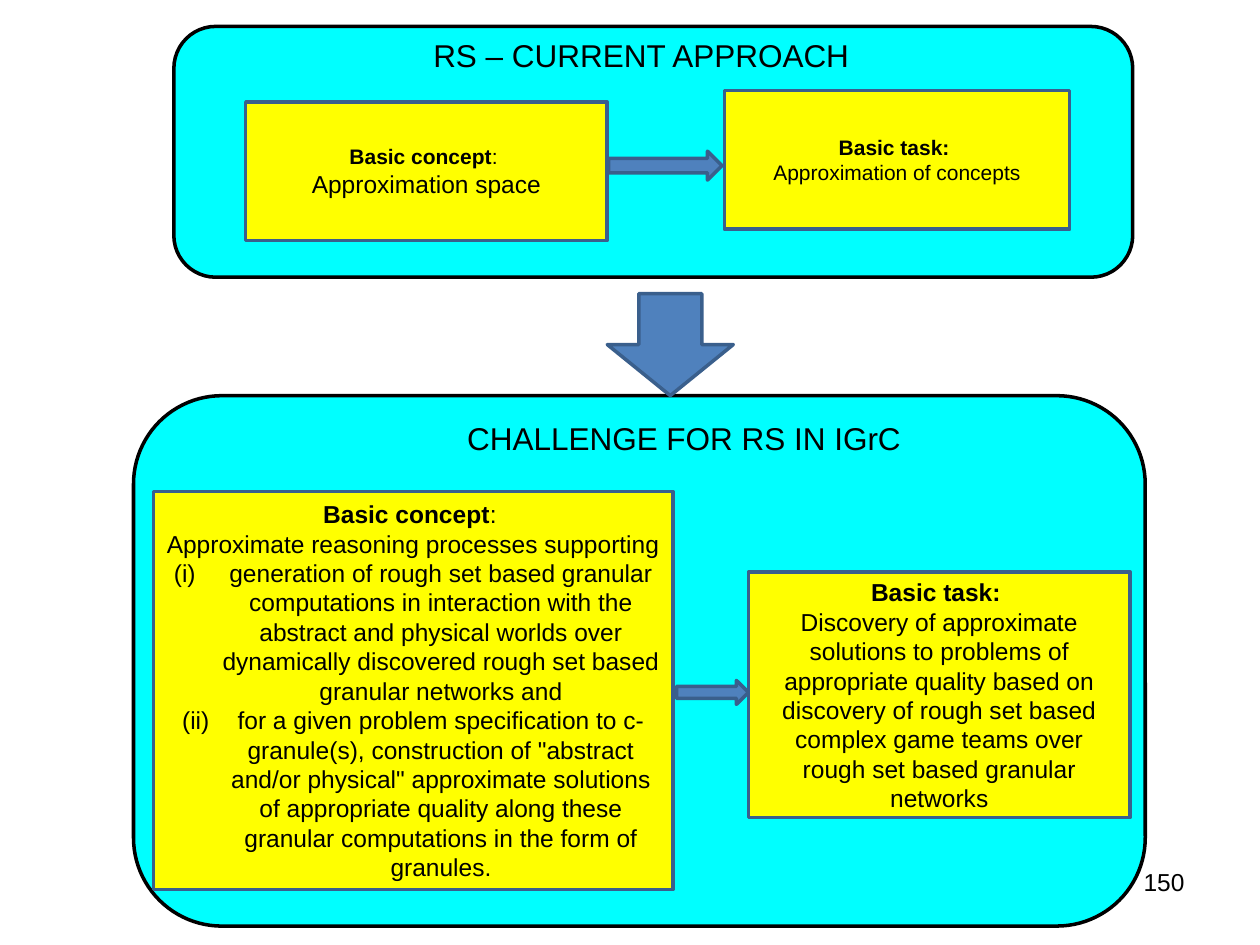
from lxml.etree import SubElement
from pptx import Presentation
from pptx.dml.color import RGBColor
from pptx.enum.shapes import MSO_SHAPE
from pptx.enum.text import MSO_ANCHOR, PP_ALIGN
from pptx.oxml.ns import qn
from pptx.util import Inches, Pt

COLS, ROWS = 100, 75
BLACK, CYAN, YELLOW = "000000", "00FFFF", "FFFF00"
BLUE, DARK_BLUE = "4F81BD", "3A5F8C"


def rgb(value):
    return RGBColor.from_string(value)


def add_run(p, text, size=14, bold=False, color=BLACK, font="Arial"):
    r = p.add_run()
    r.text = text
    r.font.name, r.font.size, r.font.bold = font, Pt(size), bold
    r.font.color.rgb = rgb(color)


def number_paragraph(p, indent=0.44):
    pPr = p._p.get_or_add_pPr()
    pPr.set("marL", str(Inches(indent)))
    pPr.set("indent", str(-Inches(indent)))
    SubElement(pPr, qn("a:buFont"), typeface="+mj-lt")
    SubElement(pPr, qn("a:buAutoNum"), type="romanLcParenBoth")


class Deck:
    def __init__(self):
        self.prs = Presentation()
        self.prs.slide_width, self.prs.slide_height = Inches(10), Inches(7.5)
        self.s = self.prs.slides.add_slide(self.prs.slide_layouts[6])

    def place(self, col, row, cols, rows):
        x, y = self.prs.slide_width / COLS, self.prs.slide_height / ROWS
        return [round(v) for v in (col * x, row * y, cols * x, rows * y)]

    def shape(self, kind, at, fill=BLUE, line=DARK_BLUE):
        sp = self.s.shapes.add_shape(kind, *self.place(*at))
        sp.shadow.inherit = False
        sp.fill.solid()
        sp.fill.fore_color.rgb = rgb(fill)
        sp.line.color.rgb = rgb(line)
        sp.line.width = Pt(2)
        return sp

    def panel(self, at):
        self.shape(MSO_SHAPE.ROUNDED_RECTANGLE, at, CYAN, BLACK)

    def label(self, text, at, size, align):
        tf = self.s.shapes.add_textbox(*self.place(*at)).text_frame
        tf.word_wrap = True
        p = tf.paragraphs[0]
        p.alignment = align
        add_run(p, text, size)

    def card(self, at, head, body, tail="", head_size=14, body_size=14, items=()):
        tf = self.shape(MSO_SHAPE.RECTANGLE, at, YELLOW).text_frame
        tf.word_wrap = True
        tf.vertical_anchor = MSO_ANCHOR.MIDDLE
        p = tf.paragraphs[0]
        p.alignment = PP_ALIGN.CENTER
        add_run(p, head, head_size, bold=True)
        if tail:
            add_run(p, tail, head_size)
        for i, text in enumerate((body, *items)):
            p = tf.add_paragraph()
            p.alignment = PP_ALIGN.CENTER
            if i:
                number_paragraph(p)
            add_run(p, text, body_size)


def main():
    d = Deck()
    d.label("150", (71.7, 68.3, 23.3, 5.2), 14, PP_ALIGN.RIGHT)

    d.panel((13.8, 2.1, 76.1, 19.9))
    d.card((19.5, 8.1, 28.7, 11), "Basic concept", "Approximation space",
           tail=": ", head_size=12)
    d.card((57.5, 7.2, 27.4, 11), "Basic task: ", "Approximation of concepts",
           head_size=12, body_size=12)
    d.shape(MSO_SHAPE.RIGHT_ARROW, (48.3, 12, 9, 2.3))
    d.label("RS – CURRENT APPROACH", (33.4, 2.4, 38.2, 4), 18, PP_ALIGN.LEFT)

    d.panel((10.6, 31.4, 80.3, 42.1))
    d.card((12.2, 39, 41.2, 31.6), "Basic concept",
           "Approximate reasoning processes supporting ", tail=": ",
           items=("generation of rough set based granular computations in "
                  "interaction with the abstract and physical worlds over "
                  "dynamically discovered rough set based granular networks and",
                  "for a given problem specification to c-granule(s), "
                  'construction of "abstract and/or physical" approximate '
                  "solutions of appropriate quality along these granular "
                  "computations in the form of granules."))
    d.card((59.4, 45.4, 30.3, 19.5), "Basic task: ",
           "Discovery of approximate solutions to problems of appropriate "
           "quality based on discovery of rough set based complex game teams "
           "over rough set based granular networks")
    d.shape(MSO_SHAPE.RIGHT_ARROW, (53.7, 54, 5.7, 1.9))
    d.label("CHALLENGE FOR RS IN IGrC", (33.8, 32.8, 41, 4), 18, PP_ALIGN.CENTER)
    d.shape(MSO_SHAPE.DOWN_ARROW, (48.2, 23.3, 10, 8.1))

    d.prs.save("out.pptx")


if __name__ == "__main__":
    main()
